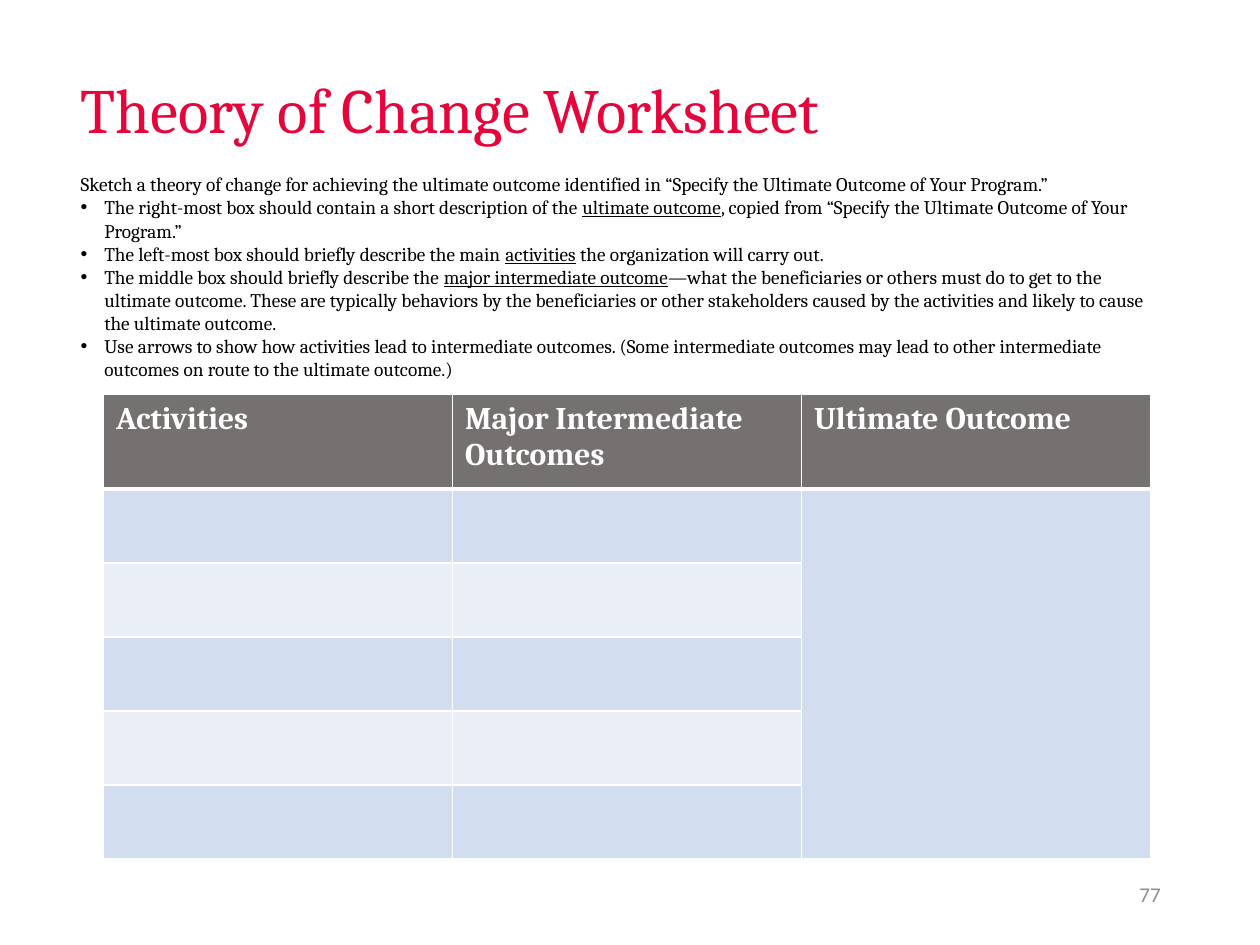
from lxml import etree
from pptx import Presentation
from pptx.dml.color import RGBColor
from pptx.enum import text
from pptx.oxml.ns import qn
from pptx.util import Pt

RED = RGBColor(0xE5, 0x05, 0x3A)
BLACK = RGBColor(0, 0, 0)
WHITE = RGBColor(0xFF, 0xFF, 0xFF)
GRAY = RGBColor(0x8C, 0x8C, 0x8C)
HEADER_FILL = RGBColor(0x76, 0x71, 0x71)
BAND_FILLS = [RGBColor(0xD2, 0xDE, 0xEF), RGBColor(0xEA, 0xEF, 0xF7)]

INTRO = ("Sketch a theory of change for achieving the ultimate outcome identified in "
         "“Specify the Ultimate Outcome of Your Program.”")
# Each bullet is a list of pieces; every second piece is underlined.
BULLETS = [
    ["The right-most box should contain a short description of the ", "ultimate outcome",
     ", copied from “Specify the Ultimate Outcome of Your Program.”"],
    ["The left-most box should briefly describe the main ", "activities",
     " the organization will carry out."],
    ["The middle box should briefly describe the ", "major intermediate outcome",
     "—what the beneficiaries or others must do to get to the ultimate outcome. "
     "These are typically behaviors by the beneficiaries or other stakeholders caused "
     "by the activities and likely to cause the ultimate outcome."],
    ["Use arrows to show how activities lead to intermediate outcomes. (Some intermediate "
     "outcomes may lead to other intermediate outcomes on route to the ultimate outcome.)"],
]
HEADINGS = ["Activities", "Major Intermediate Outcomes", "Ultimate Outcome"]
BODY_ROWS = 5


def add_text(paragraph, content, size=11, font="Cambria", color=BLACK,
             bold=False, underline=False):
    run = paragraph.add_run()
    run.text = content
    run.font.size = Pt(size)
    run.font.name = font
    run.font.color.rgb = color
    run.font.bold = bold
    run.font.underline = underline


def place(shape, left, top, width, height):
    shape.left, shape.top = Pt(left), Pt(top)
    shape.width, shape.height = Pt(width), Pt(height)


def set_bullet(paragraph, char=None, indent=0):
    properties = paragraph._p.get_or_add_pPr()
    properties.set("marL", str(Pt(indent)))
    properties.set("indent", str(-Pt(indent)))
    if char:
        etree.SubElement(properties, qn("a:buFont"), typeface="Arial")
        etree.SubElement(properties, qn("a:buChar"), char=char)
    else:
        etree.SubElement(properties, qn("a:buNone"))


def set_borders(cell, **widths):
    properties = cell._tc.get_or_add_tcPr()
    for side in "LRTB":
        line = etree.SubElement(properties, qn("a:ln" + side),
                                w=str(Pt(widths.get(side, 1))))
        fill = etree.SubElement(line, qn("a:solidFill"))
        etree.SubElement(fill, qn("a:srgbClr"), val=str(WHITE))


def fill_cell(cell, color):
    cell.fill.solid()
    cell.fill.fore_color.rgb = color


def add_title(slide):
    title = slide.shapes.title
    place(title, 38.9, 34.6, 632, 59.8)
    frame = title.text_frame
    frame.vertical_anchor = text.MSO_ANCHOR.MIDDLE
    frame.auto_size = text.MSO_AUTO_SIZE.NONE
    paragraph = frame.paragraphs[0]
    paragraph.alignment = text.PP_ALIGN.LEFT
    paragraph.line_spacing = 0.9
    add_text(paragraph, "Theory of Change Worksheet", size=36, color=RED)


def add_instructions(slide):
    body = slide.placeholders[1]
    place(body, 38.9, 95, 632, 149)
    frame = body.text_frame
    frame.auto_size = text.MSO_AUTO_SIZE.NONE
    for number, pieces in enumerate([[INTRO]] + BULLETS):
        paragraph = frame.add_paragraph() if number else frame.paragraphs[0]
        paragraph.space_before = Pt(0)
        if number:
            set_bullet(paragraph, "•", 13.5)
        else:
            set_bullet(paragraph)
        for index, piece in enumerate(pieces):
            add_text(paragraph, piece, underline=index % 2 == 1)


def add_worksheet(slide):
    columns = len(HEADINGS)
    frame = slide.shapes.add_table(BODY_ROWS + 1, columns,
                                   Pt(59.2), Pt(225.5), Pt(598.2), Pt(265.5))
    table = frame.table
    for column in table.columns:
        column.width = Pt(199.4)
    for number, row in enumerate(table.rows):
        row.height = Pt(42.3 if number else 54)

    # Header row
    for column, heading in enumerate(HEADINGS):
        cell = table.cell(0, column)
        add_text(cell.text_frame.paragraphs[0], heading, size=18, color=WHITE, bold=True)
        set_borders(cell, B=3)
        fill_cell(cell, HEADER_FILL)

    # Banded rows to write in; the last column is one tall box
    for row in range(1, BODY_ROWS + 1):
        for column in range(columns):
            cell = table.cell(row, column)
            set_borders(cell, T=3 if row == 1 else 1)
            fill_cell(cell, BAND_FILLS[(row - 1) % 2])
    table.cell(1, columns - 1).merge(table.cell(BODY_ROWS, columns - 1))


def add_page_number(slide):
    box = slide.shapes.add_textbox(Pt(508.3), Pt(496.8), Pt(162), Pt(28.8))
    frame = box.text_frame
    frame.word_wrap = True
    frame.vertical_anchor = text.MSO_ANCHOR.MIDDLE
    paragraph = frame.paragraphs[0]
    paragraph.alignment = text.PP_ALIGN.RIGHT
    add_text(paragraph, "77", size=12, font="Calibri", color=GRAY)


def main():
    presentation = Presentation()
    presentation.slide_width, presentation.slide_height = Pt(720), Pt(540)
    slide = presentation.slides.add_slide(presentation.slide_layouts[1])
    add_title(slide)
    add_page_number(slide)
    add_instructions(slide)
    add_worksheet(slide)
    presentation.save("out.pptx")


if __name__ == "__main__":
    main()
